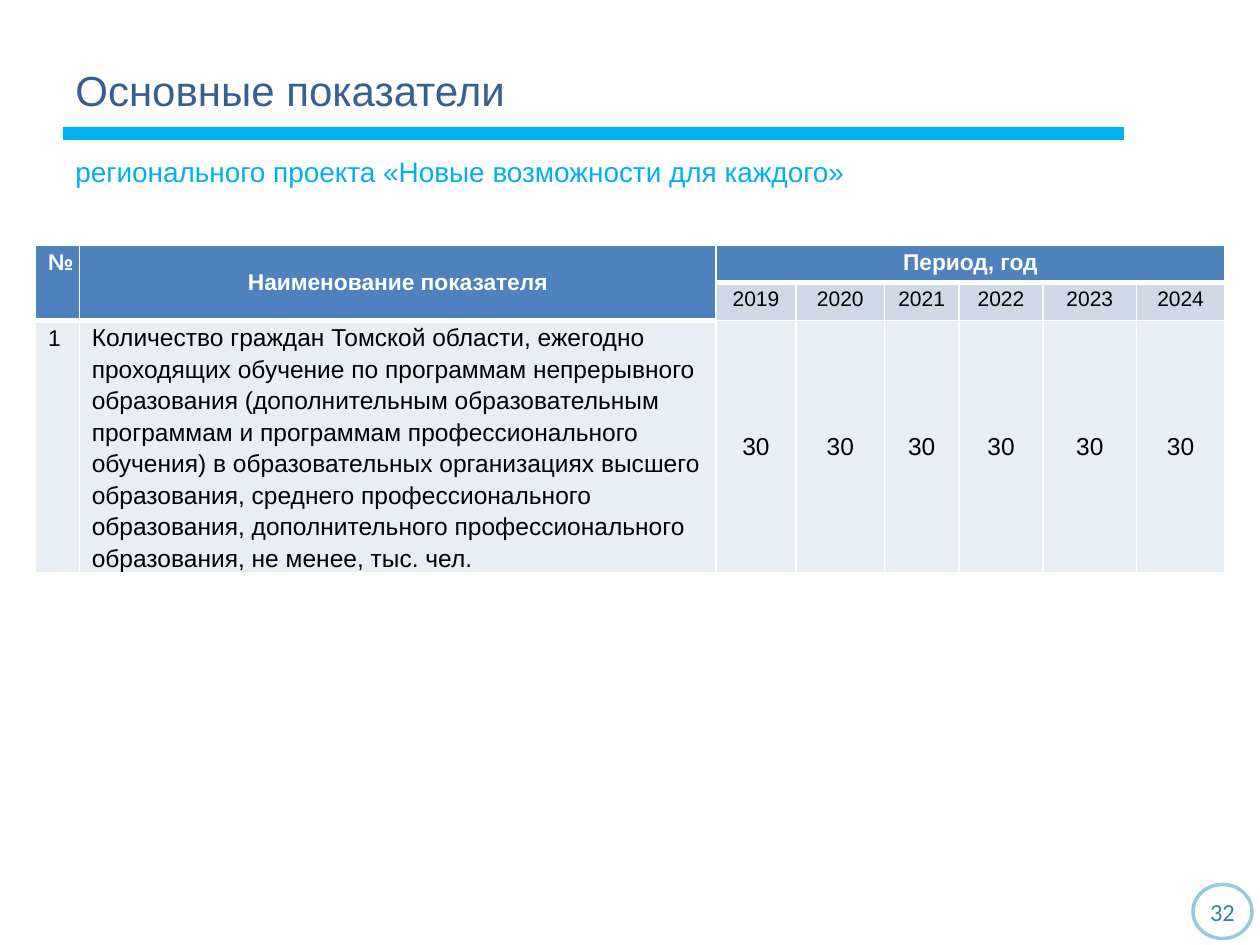
from lxml import etree
from pptx import Presentation
from pptx.dml.color import RGBColor
from pptx.enum.shapes import MSO_SHAPE
from pptx.enum.text import MSO_ANCHOR, PP_ALIGN
from pptx.oxml.ns import qn
from pptx.util import Cm, Pt

LEFT, CENTER = PP_ALIGN.LEFT, PP_ALIGN.CENTER
TOP, MIDDLE = MSO_ANCHOR.TOP, MSO_ANCHOR.MIDDLE
RECTANGLE, OVAL = MSO_SHAPE.RECTANGLE, MSO_SHAPE.OVAL

TITLE_ONLY = 5
CYAN, WHITE = "00B0F0", "FFFFFF"
HEADER_FILL, YEAR_FILL, BODY_FILL = "4F81BD", "D0D8E8", "E9EDF4"

HEADER = {"size": Pt(13), "bold": True, "color": WHITE}
YEAR = {"size": Pt(12)}
NUMBER = {"size": Pt(13)}
BODY = {"size": Pt(14)}

COLUMN_WIDTHS = [0.88, 12.83, 1.62, 1.78, 1.5, 1.7, 1.88, 1.78]
ROW_HEIGHTS = [0.73, 0.77, 5.08]
CELL_MARGINS = (0.25, 0.1, 0.25, 0.1)
NO_MARGINS = (0, 0, 0, 0)
FIRST_YEAR_COLUMN = 2
YEARS = range(2019, 2025)
YEARLY_VALUES = [30] * len(YEARS)
INDICATOR = (
    "Количество граждан Томской области, ежегодно проходящих обучение "
    "по программам непрерывного образования (дополнительным образовательным "
    "программам и программам профессионального обучения) в образовательных "
    "организациях высшего образования, среднего профессионального образования, "
    "дополнительного профессионального образования, не менее, тыс. чел."
)


def rgb(color):
    return RGBColor.from_string(color)


def set_margins(target, margins):
    for side, value in zip(("left", "top", "right", "bottom"), margins):
        setattr(target, f"margin_{side}", Cm(value))


def write(frame, text, style, align=LEFT):
    """Fill the first paragraph of a text frame and format it."""
    paragraph = frame.paragraphs[0]
    paragraph.text = text
    paragraph.alignment = align
    font_format = {"name": "Arial", "bold": False, "color": "000000", **style}
    font = paragraph.runs[0].font
    font.color.rgb = rgb(font_format.pop("color"))
    for attribute, value in font_format.items():
        setattr(font, attribute, value)
    return paragraph


def format_heading(shape, box, text, style):
    shape.left, shape.top, shape.width, shape.height = map(Cm, box)
    frame = shape.text_frame
    frame.word_wrap = True
    frame.vertical_anchor = TOP
    set_margins(frame, (0.25, 0.2, 0.25, 0.1))
    write(frame, text, style)


def add_plain_shape(slide, kind, box, fill, line=None):
    shape = slide.shapes.add_shape(kind, *map(Cm, box))
    shape.shadow.inherit = False
    shape.fill.solid()
    shape.fill.fore_color.rgb = rgb(fill)
    if line:
        shape.line.color.rgb = rgb(line)
        shape.line.width = Pt(2)
    else:
        shape.line.fill.background()
    return shape


def set_borders(cell, bottom_width):
    """Draw white borders; they must come before the fill in the cell."""
    properties = cell._tc.get_or_add_tcPr()
    widths = {"lnL": 1, "lnR": 1, "lnT": 1, "lnB": bottom_width}
    for tag, width in widths.items():
        border = etree.SubElement(properties, qn(f"a:{tag}"), w=str(Pt(width)))
        fill = etree.SubElement(border, qn("a:solidFill"))
        etree.SubElement(fill, qn("a:srgbClr"), val=WHITE)


def fill_cell(cell, text, style, fill, align=CENTER, anchor=TOP, margins=CELL_MARGINS):
    set_margins(cell, margins)
    cell.vertical_anchor = anchor
    cell.fill.solid()
    cell.fill.fore_color.rgb = rgb(fill)
    return write(cell.text_frame, text, style, align)


def add_indicator_table(slide):
    size = (len(ROW_HEIGHTS), len(COLUMN_WIDTHS))
    box = (0.72, 4.94, sum(COLUMN_WIDTHS), sum(ROW_HEIGHTS))
    table = slide.shapes.add_table(*size, *map(Cm, box)).table
    for column, width in zip(table.columns, COLUMN_WIDTHS):
        column.width = Cm(width)
    for row, height in zip(table.rows, ROW_HEIGHTS):
        row.height = Cm(height)
    for row_index, row in enumerate(table.rows):
        for cell in row.cells:
            set_borders(cell, 3 if row_index == 0 else 1)

    # Two-level header
    for column in range(FIRST_YEAR_COLUMN):
        table.cell(0, column).merge(table.cell(1, column))
    table.cell(0, FIRST_YEAR_COLUMN).merge(table.cell(0, len(COLUMN_WIDTHS) - 1))
    fill_cell(table.cell(0, 0), "№", HEADER, HEADER_FILL)
    fill_cell(table.cell(0, 1), "Наименование показателя", HEADER, HEADER_FILL,
              anchor=MIDDLE)
    fill_cell(table.cell(0, FIRST_YEAR_COLUMN), "Период, год", HEADER, HEADER_FILL)

    # Indicator row
    fill_cell(table.cell(2, 0), "1", NUMBER, BODY_FILL, align=LEFT)
    paragraph = fill_cell(table.cell(2, 1), INDICATOR, BODY, BODY_FILL, align=LEFT,
                          anchor=MIDDLE, margins=(0.05, 0, 0.05, 0))
    paragraph.line_spacing = Pt(18)
    paragraph._p.get_or_add_pPr().set("marL", str(Cm(0.2)))

    # Years and their values
    for column, (year, value) in enumerate(zip(YEARS, YEARLY_VALUES), FIRST_YEAR_COLUMN):
        fill_cell(table.cell(1, column), str(year), YEAR, YEAR_FILL)
        fill_cell(table.cell(2, column), str(value), BODY, BODY_FILL,
                  anchor=MIDDLE, margins=NO_MARGINS)


def add_page_number(slide, number):
    badge = add_plain_shape(slide, OVAL, (24.05, 17.83, 1.19, 1.09), WHITE, "93CDDD")
    frame = badge.text_frame
    frame.vertical_anchor = MIDDLE
    set_margins(frame, NO_MARGINS)
    style = {"name": "Calibri", "size": Pt(14), "color": "31859C"}
    write(frame, number, style, CENTER)


def main():
    presentation = Presentation()
    presentation.slide_width, presentation.slide_height = Cm(25.4), Cm(19.05)
    slide = presentation.slides.add_slide(presentation.slide_layouts[TITLE_ONLY])

    # Heading with its rule and subtitle
    add_plain_shape(slide, RECTANGLE, (1.27, 2.56, 21.39, 0.26), CYAN)
    format_heading(slide.shapes.title, (1.27, 1.09, 19.79, 1.63),
                   "Основные показатели", {"size": Pt(24), "color": "376092"})
    subtitle_box = (1.27, 2.92, 21.74, 1.24)
    subtitle = slide.shapes.add_textbox(*map(Cm, subtitle_box))
    format_heading(subtitle, subtitle_box,
                   "регионального проекта «Новые возможности для каждого»",
                   {"size": Pt(16), "color": CYAN})

    add_indicator_table(slide)
    add_page_number(slide, "32")
    presentation.save("out.pptx")


if __name__ == "__main__":
    main()
